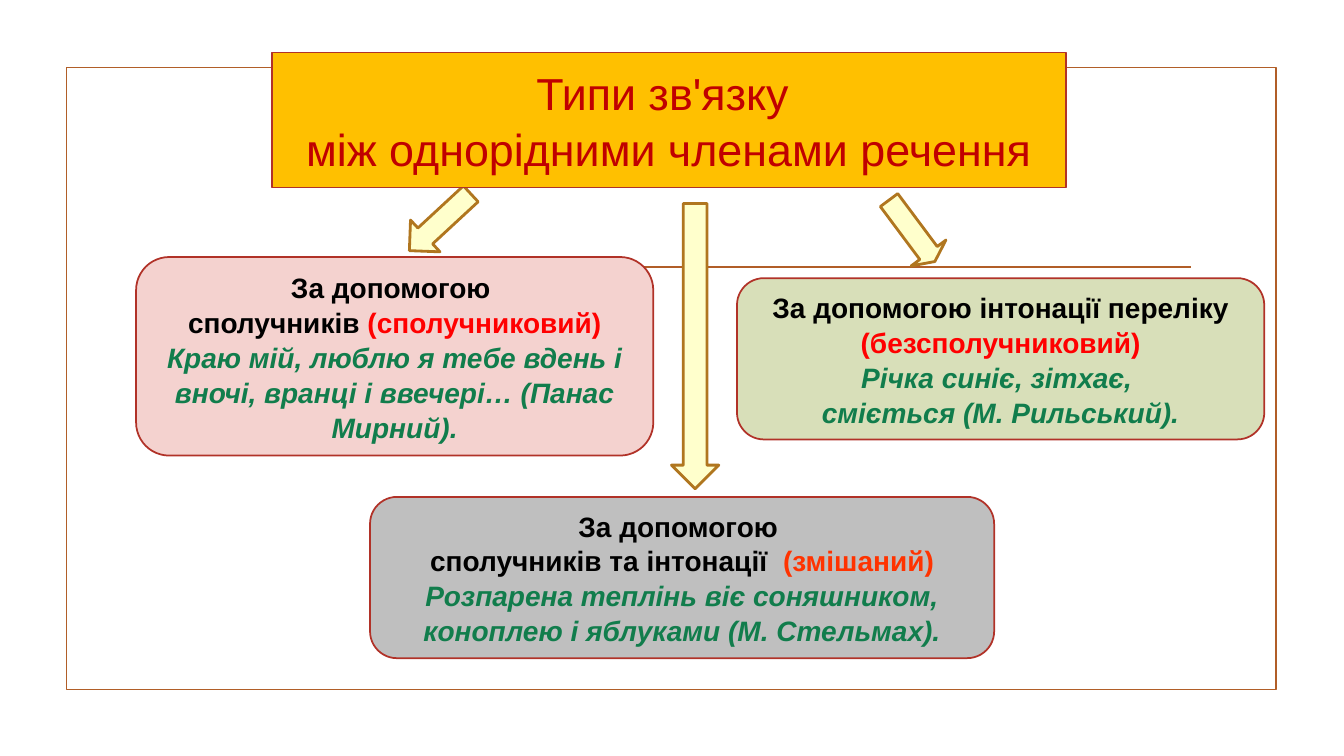
from lxml.etree import SubElement
from pptx import Presentation
from pptx.dml.color import RGBColor
from pptx.enum.shapes import MSO_CONNECTOR, MSO_SHAPE
from pptx.enum.text import MSO_ANCHOR, PP_ALIGN
from pptx.oxml.ns import qn
from pptx.util import Inches, Pt

FRAME_LINE = "B15E28"
BOX_LINE = "B13228"
BLACK, RED, ORANGE, GREEN = "000000", "FF0000", "FF3300", "117D4C"


def color(value):
    return RGBColor.from_string(value)


def add_block(page, kind, box, fill, line, width=1.25):
    shape = page.shapes.add_shape(kind, *map(Inches, box))
    shape.shadow.inherit = False
    if fill:
        shape.fill.solid()
        shape.fill.fore_color.rgb = color(fill)
    else:
        shape.fill.background()
    shape.line.color.rgb = color(line)
    shape.line.width = Pt(width)
    return shape


def style(span, size, value, bold=False, italic=False):
    span.font.name = "Arial"
    span.font.size = Pt(size)
    span.font.color.rgb = color(value)
    span.font.bold = bold
    span.font.italic = italic


def add_frame(page, box):
    left, top, width, height = box
    add_block(page, MSO_SHAPE.RECTANGLE, box, None, FRAME_LINE)
    rule_top = Inches(top + 1.98)
    rule = page.shapes.add_connector(
        MSO_CONNECTOR.STRAIGHT, Inches(left + 0.87), rule_top,
        Inches(left + width - 0.85), rule_top)
    rule.line.color.rgb = color(FRAME_LINE)
    rule.line.width = Pt(1.25)
    SubElement(rule._element.spPr, qn("a:effectLst"))


def add_title(page, box, text):
    shape = add_block(page, MSO_SHAPE.RECTANGLE, box, "FFC000", BOX_LINE)
    frame = shape.text_frame
    frame.word_wrap = True
    frame.vertical_anchor = MSO_ANCHOR.MIDDLE
    frame.text = text
    para = frame.paragraphs[0]
    para.alignment = PP_ALIGN.CENTER
    para.line_spacing = 1.04
    for span in para.runs:
        style(span, 32, "C00000")


def add_card(page, box, fill, lines):
    shape = add_block(page, MSO_SHAPE.ROUNDED_RECTANGLE, box, fill, BOX_LINE)
    frame = shape.text_frame
    frame.word_wrap = True
    frame.vertical_anchor = MSO_ANCHOR.MIDDLE
    for index, spans in enumerate(lines):
        para = frame.paragraphs[0] if index == 0 else frame.add_paragraph()
        para.alignment = PP_ALIGN.CENTER
        para.line_spacing = 1.04
        for text, value in spans:
            span = para.add_run()
            span.text = text
            style(span, 20, value, bold=True, italic=value == GREEN)


def add_arrow(page, box, rotation=0, head=0.5):
    arrow = add_block(page, MSO_SHAPE.DOWN_ARROW, box, "FFFFCC", "B0761F", 2)
    arrow.adjustments[1] = head
    arrow.rotation = rotation


def build_scheme(page):
    add_frame(page, (0.66, 0.67, 12, 6.17))
    add_card(page, (1.35, 2.55, 5.13, 1.97), "F4D2CF", [
        [("За допомогою ", BLACK)],
        [("сполучників ", BLACK), ("(сполучниковий)", RED)],
        [("Краю мій, люблю я тебе вдень і вночі, вранці і ввечері… "
          "(Панас Мирний).", GREEN)],
    ])
    add_card(page, (3.67, 4.93, 6.19, 1.6), "BFBFBF", [
        [("За допомогою ", BLACK)],
        [("сполучників та інтонації  ", BLACK), ("(змішаний)", ORANGE)],
        [("Розпарена теплінь віє соняшником, коноплею і яблуками "
          "(М. Стельмах).", GREEN)],
    ])
    add_arrow(page, (6.66, 2.02, 0.47, 2.83))
    add_arrow(page, (8.83, 1.91, 0.43, 0.76), 323.3, 0.244)
    add_arrow(page, (4.15, 1.79, 0.43, 0.83), 47.2)
    add_title(page, (2.7, 0.52, 7.87, 1.34),
              "Типи зв'язку \vміж однорідними членами речення")
    add_card(page, (7.31, 2.76, 5.23, 1.6), "D8DFB9", [
        [("За допомогою інтонації переліку ", BLACK),
         ("(безсполучниковий)", RED)],
        [("Річка синіє, зітхає, ", GREEN)],
        [("сміється (М. Рильський).", GREEN)],
    ])


def main():
    deck = Presentation()
    deck.slide_width = Inches(13.33)
    deck.slide_height = Inches(7.5)
    build_scheme(deck.slides.add_slide(deck.slide_layouts[6]))
    deck.save("out.pptx")


if __name__ == "__main__":
    main()
